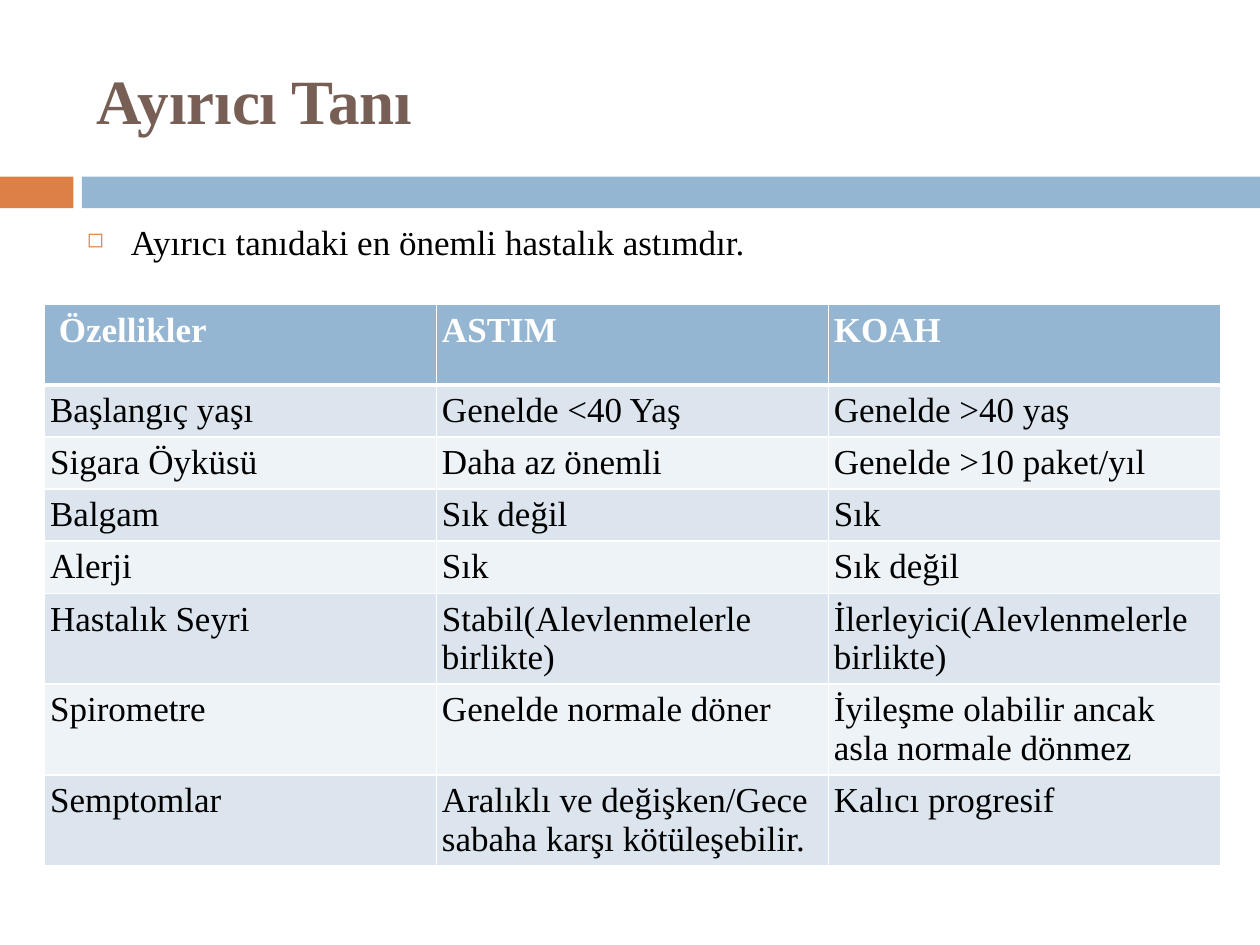
"""Build the differential diagnosis slide comparing asthma and COPD."""
from dataclasses import dataclass

from lxml import etree
from pptx import Presentation
from pptx.dml.color import RGBColor
from pptx.enum.shapes import MSO_SHAPE
from pptx.enum.text import MSO_ANCHOR, PP_ALIGN
from pptx.oxml.ns import qn
from pptx.util import Cm, Pt

RECTANGLE = MSO_SHAPE.RECTANGLE
MIDDLE, TOP = MSO_ANCHOR.MIDDLE, MSO_ANCHOR.TOP
LEFT = PP_ALIGN.LEFT

ORANGE = RGBColor(0xDD, 0x80, 0x47)
BLUE = RGBColor(0x94, 0xB6, 0xD2)
BROWN = RGBColor(0x77, 0x5F, 0x55)
BLACK = RGBColor(0x00, 0x00, 0x00)
WHITE = RGBColor(0xFF, 0xFF, 0xFF)
BAND_DARK = RGBColor(0xDC, 0xE5, 0xEE)
BAND_LIGHT = RGBColor(0xEE, 0xF3, 0xF7)

FONT = "Times New Roman"
HEADER_HEIGHT, SINGLE_HEIGHT, DOUBLE_HEIGHT = Cm(1.62), Cm(1.05), Cm(1.83)


@dataclass(frozen=True)
class Bar:
    left: int
    width: int
    color: RGBColor


@dataclass(frozen=True)
class Row:
    texts: tuple[str, str, str]
    height: int = SINGLE_HEIGHT


BARS = (Bar(Cm(0), Cm(1.48), ORANGE), Bar(Cm(1.65), Cm(23.75), BLUE))

ROWS = (
    Row((" Özellikler", "ASTIM", "KOAH"), HEADER_HEIGHT),
    Row(("Başlangıç yaşı", "Genelde <40 Yaş", "Genelde >40 yaş")),
    Row(("Sigara Öyküsü", "Daha az önemli", "Genelde >10 paket/yıl")),
    Row(("Balgam", "Sık değil", "Sık")),
    Row(("Alerji", "Sık", "Sık değil")),
    Row(("Hastalık Seyri", "Stabil(Alevlenmelerle birlikte)",
         "İlerleyici(Alevlenmelerle birlikte)"), DOUBLE_HEIGHT),
    Row(("Spirometre", "Genelde normale döner",
         "İyileşme olabilir ancak asla normale dönmez"), DOUBLE_HEIGHT),
    Row(("Semptomlar", "Aralıklı ve değişken/Gece sabaha karşı kötüleşebilir.",
         "Kalıcı progresif"), DOUBLE_HEIGHT),
)


def add_span(para, text: str, size: int, color: RGBColor, bold: bool = False) -> None:
    para.alignment = LEFT
    span = para.add_run()
    span.text = text
    span.font.name = FONT
    span.font.size = Pt(size)
    span.font.bold = bold
    span.font.color.rgb = color


def add_title(page, text: str) -> None:
    box = page.shapes.title
    box.left, box.top, box.width, box.height = Cm(1.7), Cm(0.64), Cm(22.66), Cm(2.74)
    box.text_frame.vertical_anchor = MIDDLE
    add_span(box.text_frame.paragraphs[0], text, 36, BROWN, True)


def add_bar(page, bar: Bar) -> None:
    shape = page.shapes.add_shape(RECTANGLE, bar.left, Cm(3.56), bar.width, Cm(0.64))
    shape.shadow.inherit = False
    shape.fill.solid()
    shape.fill.fore_color.rgb = bar.color
    shape.line.fill.background()


def add_border(cell, side: str, width: int) -> None:
    properties = cell._tc.get_or_add_tcPr()
    line = etree.SubElement(properties, qn(f"a:ln{side}"), w=str(Pt(width)))
    fill = etree.SubElement(line, qn("a:solidFill"))
    etree.SubElement(fill, qn("a:srgbClr"), val=str(WHITE))


def format_cell(cell, text: str, row_index: int) -> None:
    is_header = row_index == 0
    cell.margin_left = cell.margin_right = Cm(0.11)
    cell.margin_top = cell.margin_bottom = Cm(0.13)
    cell.vertical_anchor = TOP
    thick_side = {0: "B", 1: "T"}.get(row_index)
    for side in "LRTB":
        add_border(cell, side, 3 if side == thick_side else 1)
    cell.fill.solid()
    band = BAND_DARK if row_index % 2 else BAND_LIGHT
    cell.fill.fore_color.rgb = BLUE if is_header else band
    color = WHITE if is_header else BLACK
    add_span(cell.text_frame.paragraphs[0], text, 20, color, is_header)


def add_comparison(page, rows: tuple[Row, ...]) -> None:
    height = sum(row.height for row in rows)
    frame = page.shapes.add_table(
        len(rows), len(rows[0].texts), Cm(0.9), Cm(6.14), Cm(23.7), height)
    table = frame.table
    for row_index, row in enumerate(rows):
        table.rows[row_index].height = row.height
        for column_index, text in enumerate(row.texts):
            format_cell(table.cell(row_index, column_index), text, row_index)


def add_bullet(page, text: str) -> None:
    box = page.shapes.add_textbox(Cm(1.5), Cm(4.32), Cm(22.2), Cm(1.6))
    box.text_frame.word_wrap = True
    para = box.text_frame.paragraphs[0]
    para.space_before = Pt(7)
    add_span(para, text, 20, BLACK)
    properties = para._p.get_or_add_pPr()
    properties.set("marL", str(Cm(0.89)))
    properties.set("indent", str(-Cm(0.89)))
    color = etree.SubElement(properties, qn("a:buClr"))
    etree.SubElement(color, qn("a:srgbClr"), val=str(ORANGE))
    etree.SubElement(properties, qn("a:buSzPct"), val="60000")
    etree.SubElement(properties, qn("a:buChar"), char="◻")


def main() -> None:
    deck = Presentation()
    deck.slide_width, deck.slide_height = Cm(25.4), Cm(19.05)
    page = deck.slides.add_slide(deck.slide_layouts.get_by_name("Title Only"))
    for bar in BARS:
        add_bar(page, bar)
    add_title(page, "Ayırıcı Tanı")
    add_comparison(page, ROWS)
    add_bullet(page, "Ayırıcı tanıdaki en önemli hastalık astımdır.")
    deck.save("out.pptx")


if __name__ == "__main__":
    main()
